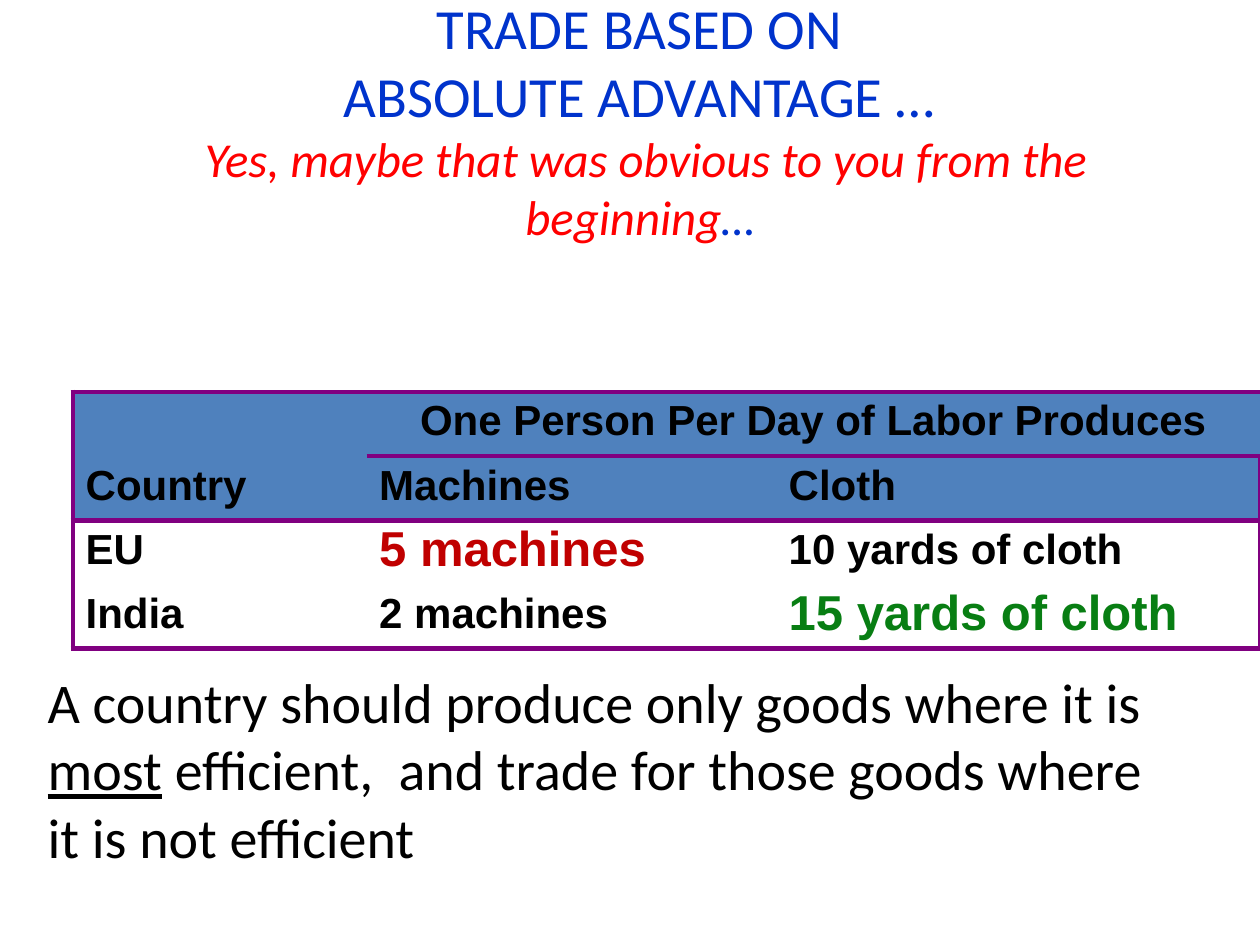
import pptx
import pptx.dml.color
import pptx.enum.text
import pptx.oxml.ns
import pptx.util
from lxml import etree
from pptx.util import Inches

COLORS = {
    "blue": "0033CC", "red": "FF0000", "black": "000000", "crimson": "C00000",
    "green": "087E13", "header": "4F81BD", "border": "800080",
}
CENTER = pptx.enum.text.PP_ALIGN.CENTER
LEFT = pptx.enum.text.PP_ALIGN.LEFT


class SlideBuilder:
    """Holds the style and the current slide, and adds its elements."""

    def __init__(self, slide):
        self.slide = slide
        self.text_font = "Calibri"
        self.table_font = "Arial"
        self.border_width = pptx.util.Pt(3)

    def add_run(self, paragraph, text, size, color, font, **style):
        run = paragraph.add_run()
        run.text = text
        run.font.name = font
        run.font.size = pptx.util.Pt(size)
        run.font.color.rgb = pptx.dml.color.RGBColor.from_string(COLORS[color])
        for name, value in style.items():
            setattr(run.font, name, value)

    def add_text(self, left, top, width, height, lines, alignment, anchor):
        shape = self.slide.shapes.add_textbox(
            Inches(left), Inches(top), Inches(width), Inches(height))
        frame = shape.text_frame
        frame.word_wrap = True
        frame.auto_size = pptx.enum.text.MSO_AUTO_SIZE.NONE
        frame.vertical_anchor = anchor
        paragraph = frame.paragraphs[0]
        paragraph.alignment = alignment
        for index, runs in enumerate(lines):
            if index:
                paragraph.add_line_break()
            for text, size, color, style in runs:
                self.add_run(paragraph, text, size, color, self.text_font, **style)

    def set_borders(self, cell, sides):
        properties = cell._tc.get_or_add_tcPr()
        for side in "LRTB":
            line = etree.SubElement(properties, pptx.oxml.ns.qn(f"a:ln{side}"))
            if side in sides:
                line.set("w", str(self.border_width))
                fill = etree.SubElement(line, pptx.oxml.ns.qn("a:solidFill"))
                color = etree.SubElement(fill, pptx.oxml.ns.qn("a:srgbClr"))
                color.set("val", COLORS["border"])
            else:
                etree.SubElement(line, pptx.oxml.ns.qn("a:noFill"))

    def fill_cell(self, cell, text, size, color, alignment):
        cell.vertical_anchor = pptx.enum.text.MSO_ANCHOR.MIDDLE
        paragraph = cell.text_frame.paragraphs[0]
        paragraph.alignment = alignment
        paragraph.line_spacing = 0.85
        if text:
            self.add_run(paragraph, text, size, color, self.table_font, bold=True)

    def add_table(self, left, top, column_widths, row_height, rows, highlights):
        row_count, column_count = len(rows), len(column_widths)
        table = self.slide.shapes.add_table(
            row_count, column_count, Inches(left), Inches(top),
            Inches(sum(column_widths)), Inches(row_height * row_count)).table
        table.first_row = table.horz_banding = False
        for column, width in zip(table.columns, column_widths):
            column.width = Inches(width)
        for row_index, texts in enumerate(rows):
            table.rows[row_index].height = Inches(row_height)
            for column_index, text in enumerate(texts):
                cell = table.cell(row_index, column_index)
                sides = "L" if column_index == 0 else ""
                sides += "R" if column_index == column_count - 1 else ""
                sides += "T" if row_index in (0, 2) or (row_index == 1 and column_index) else ""
                sides += "B" if row_index in (1, row_count - 1) or (row_index == 0 and column_index) else ""
                self.set_borders(cell, sides)
                if row_index < 2:
                    cell.fill.solid()
                    cell.fill.fore_color.rgb = pptx.dml.color.RGBColor.from_string(COLORS["header"])
                else:
                    cell.fill.background()
                size, color = highlights.get((row_index, column_index), (24, "black"))
                self.fill_cell(cell, text, size, color, LEFT if row_index else CENTER)
        table.cell(0, 1).merge(table.cell(0, column_count - 1))


def main():
    presentation = pptx.Presentation()
    presentation.slide_width = Inches(10)
    presentation.slide_height = Inches(7.5)
    builder = SlideBuilder(presentation.slides.add_slide(presentation.slide_layouts[6]))
    builder.add_text(0.75, 0.37, 8.75, 1.63, [
        [("TRADE BASED ON ", 32.4, "blue", {})],
        [("ABSOLUTE ADVANTAGE … ", 32.4, "blue", {})],
        [("Yes, maybe that was obvious to you from the beginning", 27.9, "red", {"italic": True}),
         ("… ", 27.9, "blue", {"italic": True})],
    ], CENTER, pptx.enum.text.MSO_ANCHOR.BOTTOM)
    builder.add_table(0.58, 3.11, [2.33, 3.25, 3.84], 0.51, [
        ["", "One Person Per Day of Labor Produces", ""],
        ["Country", "Machines", "Cloth"],
        ["EU", "5 machines", "10 yards of cloth"],
        ["India", "2 machines", "15 yards of cloth"],
    ], {(2, 1): (28, "crimson"), (3, 2): (28, "green")})
    builder.add_text(0.28, 5.25, 9.21, 2.26, [
        [("A country should produce only goods where it is ", 32, "black", {}),
         ("most", 32, "black", {"underline": True}),
         (" efficient,  and trade for those goods where it is not efficient", 32, "black", {})],
    ], LEFT, pptx.enum.text.MSO_ANCHOR.TOP)
    presentation.save("out.pptx")


if __name__ == "__main__":
    main()
